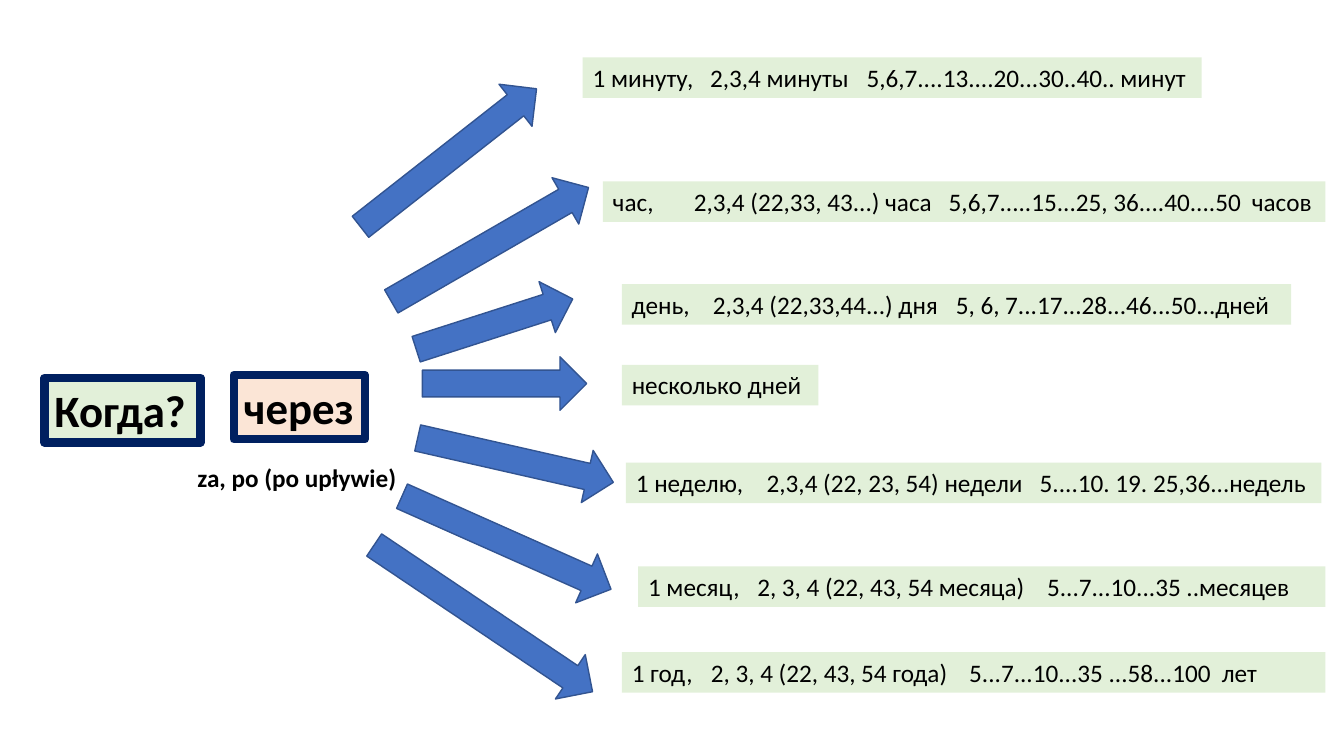
from dataclasses import dataclass

from lxml import etree
from pptx import Presentation
from pptx import util as u
from pptx.dml.color import RGBColor
from pptx.enum import shapes, text
from pptx.oxml import ns
from pptx.shapes.autoshape import Shape
from pptx.slide import Slide

BLACK = RGBColor(0x00, 0x00, 0x00)
NAVY = RGBColor(0x00, 0x20, 0x60)
PEACH = RGBColor(0xFB, 0xE5, 0xD6)
PALE_GREEN = RGBColor(0xE2, 0xF0, 0xD9)
BLUE = RGBColor(0x44, 0x72, 0xC4)
DARK_BLUE = RGBColor(0x32, 0x54, 0x91)

ARROW_HEIGHT = 38.2
PHRASE_HEIGHT = 29
WORD_HEIGHT = 46
FRAME_FORMAT = {
    "word_wrap": True,
    "auto_size": text.MSO_AUTO_SIZE.NONE,
    "vertical_anchor": text.MSO_ANCHOR.TOP,
    "margin_left": u.Pt(7.2),
    "margin_right": u.Pt(7.2),
    "margin_top": u.Pt(3.6),
    "margin_bottom": u.Pt(3.6),
}


@dataclass(frozen=True)
class Arrow:
    left: float
    top: float
    width: float
    rotation: float = 0


@dataclass(frozen=True)
class Phrase:
    left: float
    top: float
    width: float
    wording: str
    tab_stops: tuple[float, ...] = ()


ARROWS = (
    Arrow(240.5, 93.6, 159.8, 321.9),
    Arrow(268.6, 155.5, 162.7, 330),
    Arrow(294.5, 212.4, 117.4, 342.2),
    Arrow(301.7, 254.9, 117.4),
    Arrow(296.6, 309.6, 143.3, 12.8),
    Arrow(280.1, 368.6, 163.4, 24),
    Arrow(251.3, 422.6, 187.9, 33.9),
)
PHRASES = (
    Phrase(416.2, 41, 442.1, "1 минуту,\t2,3,4 минуты\t5,6,7....13....20...30..40.. минут", (84, 195.7)),
    Phrase(430.6, 129.6, 516.2, "час,\t2,3,4 (22,33, 43...) часа\t5,6,7.....15...25, 36....40....50\tчасов", (58, 240, 456.5)),
    Phrase(444.2, 203, 478.1, "день,\t2,3,4 (22,33,44...) дня\t5, 6, 7...17...28...46...50...дней", (58, 231.5)),
    Phrase(444.2, 260.6, 140.4, "несколько дней"),
    Phrase(447.1, 330.5, 496.8, "1 неделю,\t2,3,4 (22, 23, 54) недели\t5....10. 19. 25,36...недель", (93.5, 288.5)),
    Phrase(455.8, 404.6, 491, "1 месяц,\t2, 3, 4 (22, 43, 54 месяца)\t5...7...10...35 ..месяцев", (78, 285)),
    Phrase(444.2, 465.8, 502.6, "1 год,\t2, 3, 4 (22, 43, 54 года)\t5...7...10...35 ...58...100\tлет", (56.5, 241, 421.5)),
)


def place(shape: Shape, left: float, top: float, width: float, height: float) -> None:
    bounds = {"left": left, "top": top, "width": width, "height": height}
    for name, value in bounds.items():
        setattr(shape, name, u.Pt(value))


def write(shape: Shape, wording: str, size: float, bold: bool = False) -> None:
    frame = shape.text_frame
    for name, value in FRAME_FORMAT.items():
        setattr(frame, name, value)
    paragraph = frame.paragraphs[0]
    paragraph.alignment = text.PP_ALIGN.LEFT
    run = paragraph.add_run()
    run.text = wording
    font_format = {"name": "Calibri", "size": u.Pt(size), "bold": bold}
    for name, value in font_format.items():
        setattr(run.font, name, value)
    run.font.color.rgb = BLACK


def paint(shape: Shape, fill: RGBColor, line: RGBColor | None = None, weight: float = 0) -> None:
    shape.shadow.inherit = False
    shape.fill.solid()
    shape.fill.fore_color.rgb = fill
    if line is None:
        shape.line.fill.background()
    else:
        shape.line.color.rgb = line
        shape.line.width = u.Pt(weight)


def set_tab_stops(shape: Shape, positions: tuple[float, ...]) -> None:
    properties = shape.text_frame.paragraphs[0]._p.get_or_add_pPr()
    tab_list = etree.SubElement(properties, ns.qn("a:tabLst"))
    for position in positions:
        etree.SubElement(tab_list, ns.qn("a:tab"), pos=str(u.Pt(position)), algn="l")


def add_rectangle(slide: Slide) -> Shape:
    return slide.shapes.add_shape(shapes.MSO_SHAPE.RECTANGLE, 0, 0, 0, 0)


def add_arrow(slide: Slide, arrow: Arrow) -> None:
    shape = slide.shapes.add_shape(shapes.MSO_SHAPE.RIGHT_ARROW, 0, 0, 0, 0)
    place(shape, arrow.left, arrow.top, arrow.width, ARROW_HEIGHT)
    shape.rotation = arrow.rotation
    paint(shape, BLUE, DARK_BLUE, 1)


def add_phrase(slide: Slide, phrase: Phrase) -> None:
    shape = add_rectangle(slide)
    place(shape, phrase.left, phrase.top, phrase.width, PHRASE_HEIGHT)
    paint(shape, PALE_GREEN)
    write(shape, phrase.wording, 18)
    if phrase.tab_stops:
        set_tab_stops(shape, phrase.tab_stops)


def main() -> None:
    presentation = Presentation()
    presentation.slide_width = u.Pt(960)
    presentation.slide_height = u.Pt(540)
    slide = presentation.slides.add_slide(presentation.slide_layouts.get_by_name("Title Only"))

    question = slide.shapes.title
    place(question, 31.7, 270, 111.6, WORD_HEIGHT)
    paint(question, PALE_GREEN, NAVY, 6)
    write(question, "Когда?", 32, bold=True)

    preposition = add_rectangle(slide)
    place(preposition, 167, 267.8, 93.6, WORD_HEIGHT)
    paint(preposition, PEACH, NAVY, 6)
    write(preposition, "через", 32, bold=True)
    preposition.text_frame.word_wrap = False

    for arrow in ARROWS:
        add_arrow(slide, arrow)
    for phrase in PHRASES:
        add_phrase(slide, phrase)

    translation = slide.shapes.add_textbox(0, 0, 0, 0)
    place(translation, 133.9, 326.9, 159.8, PHRASE_HEIGHT)
    write(translation, "za, po (po upływie)", 18, bold=True)

    presentation.save("out.pptx")


if __name__ == "__main__":
    main()
